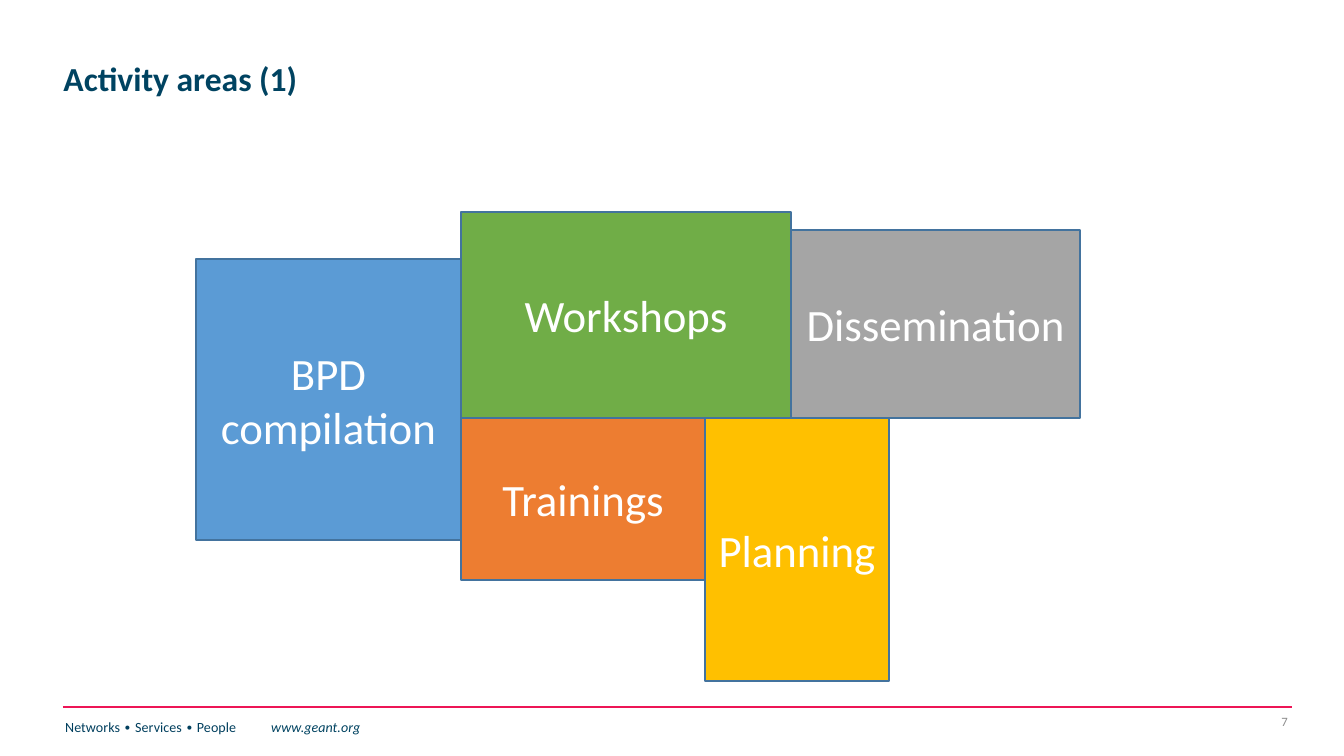
from lxml.etree import SubElement
from pptx import Presentation
from pptx.dml.color import RGBColor
from pptx.enum.shapes import MSO_CONNECTOR as Connector, MSO_SHAPE as Shape
from pptx.enum.text import MSO_ANCHOR as Anchor, PP_ALIGN as Align
from pptx.oxml.ns import qn
from pptx.util import Emu, Pt

PX_PER_INCH = 134.4
FONT = "Calibri"
NAVY, BLUE_NAVY, PINK, GREY = "004361", "003F5E", "ED1556", "8C8C8C"
WHITE, TILE_EDGE = "FFFFFF", "43739E"

# Activity tiles: lines of text, left, top, width, height, fill
TILES = [
    (["Planning"], 705, 418, 184, 263, "FFC000"),
    (["BPD", "compilation"], 196, 259, 265, 281, "5B9BD5"),
    (["Workshops"], 461, 212, 330, 206, "70AD47"),
    (["Trainings"], 461, 418, 244, 162, "ED7D31"),
    (["Dissemination"], 791, 230, 289, 188, "A5A5A5"),
]


def px(length):
    return Emu(round(length * 914400 / PX_PER_INCH))


def box(*lengths):
    return [px(length) for length in lengths]


def colour(value):
    return RGBColor.from_string(value)


def write(paragraph, text, size, color, bold=False, italic=False, align=Align.LEFT):
    paragraph.alignment = align
    run = paragraph.add_run()
    run.text = text
    font = run.font
    font.name, font.size = FONT, Pt(size)
    font.bold, font.italic = bold, italic
    font.color.rgb = colour(color)


def add_text_box(slide, left, top, width, height, anchor=Anchor.TOP):
    frame = slide.shapes.add_textbox(*box(left, top, width, height)).text_frame
    frame.word_wrap = True
    frame.vertical_anchor = anchor
    return frame.paragraphs[0]


def add_tab_stop(paragraph, position):
    properties = paragraph._p.get_or_add_pPr()
    tabs = SubElement(properties, qn("a:tabLst"))
    SubElement(tabs, qn("a:tab"), pos=str(px(position)), algn="l")


def add_title(slide, text):
    title = slide.shapes.title
    title.left, title.top, title.width, title.height = box(50, 8, 1059, 146)
    frame = title.text_frame
    frame.vertical_anchor = Anchor.MIDDLE
    paragraph = frame.paragraphs[0]
    paragraph.line_spacing = 0.9
    write(paragraph, text, 18, NAVY, bold=True)


def add_tile(group, lines, left, top, width, height, fill):
    tile = group.shapes.add_shape(Shape.RECTANGLE, *box(left, top, width, height))
    tile.shadow.inherit = False
    tile.fill.solid()
    tile.fill.fore_color.rgb = colour(fill)
    tile.line.color.rgb = colour(TILE_EDGE)
    tile.line.width = Pt(1)
    frame = tile.text_frame
    frame.word_wrap = True
    frame.vertical_anchor = Anchor.MIDDLE
    frame.margin_left = frame.margin_right = px(7)
    for index, line in enumerate(lines):
        paragraph = frame.add_paragraph() if index else frame.paragraphs[0]
        write(paragraph, line, 24, WHITE, align=Align.CENTER)


def add_rule(slide, left, right, top):
    rule = slide.shapes.add_connector(Connector.STRAIGHT, *box(left, top, right, top))
    rule.line.color.rgb = colour(PINK)
    rule.line.width = Pt(1)
    SubElement(rule._element.spPr, qn("a:effectLst"))


def add_footer(slide, number):
    add_rule(slide, 63, 1292, 707)
    paragraph = add_text_box(slide, 52, 712, 458, 40)
    add_tab_stop(paragraph, 206)
    write(paragraph, "Networks ∙ Services ∙ People\t", 7.5, BLUE_NAVY)
    write(paragraph, "www.geant.org", 7.5, NAVY, italic=True)
    paragraph = add_text_box(slide, 1219, 706, 82, 31, anchor=Anchor.MIDDLE)
    write(paragraph, number, 6.8, GREY, align=Align.RIGHT)


def main():
    presentation = Presentation()
    presentation.slide_width, presentation.slide_height = box(1344, 756)
    slide = presentation.slides.add_slide(presentation.slide_layouts[5])

    # Footer and title
    add_footer(slide, "7")
    add_title(slide, "Activity areas (1)")

    # Activity areas
    group = slide.shapes.add_group_shape()
    for tile in TILES:
        add_tile(group, *tile)

    presentation.save("out.pptx")


if __name__ == "__main__":
    main()
